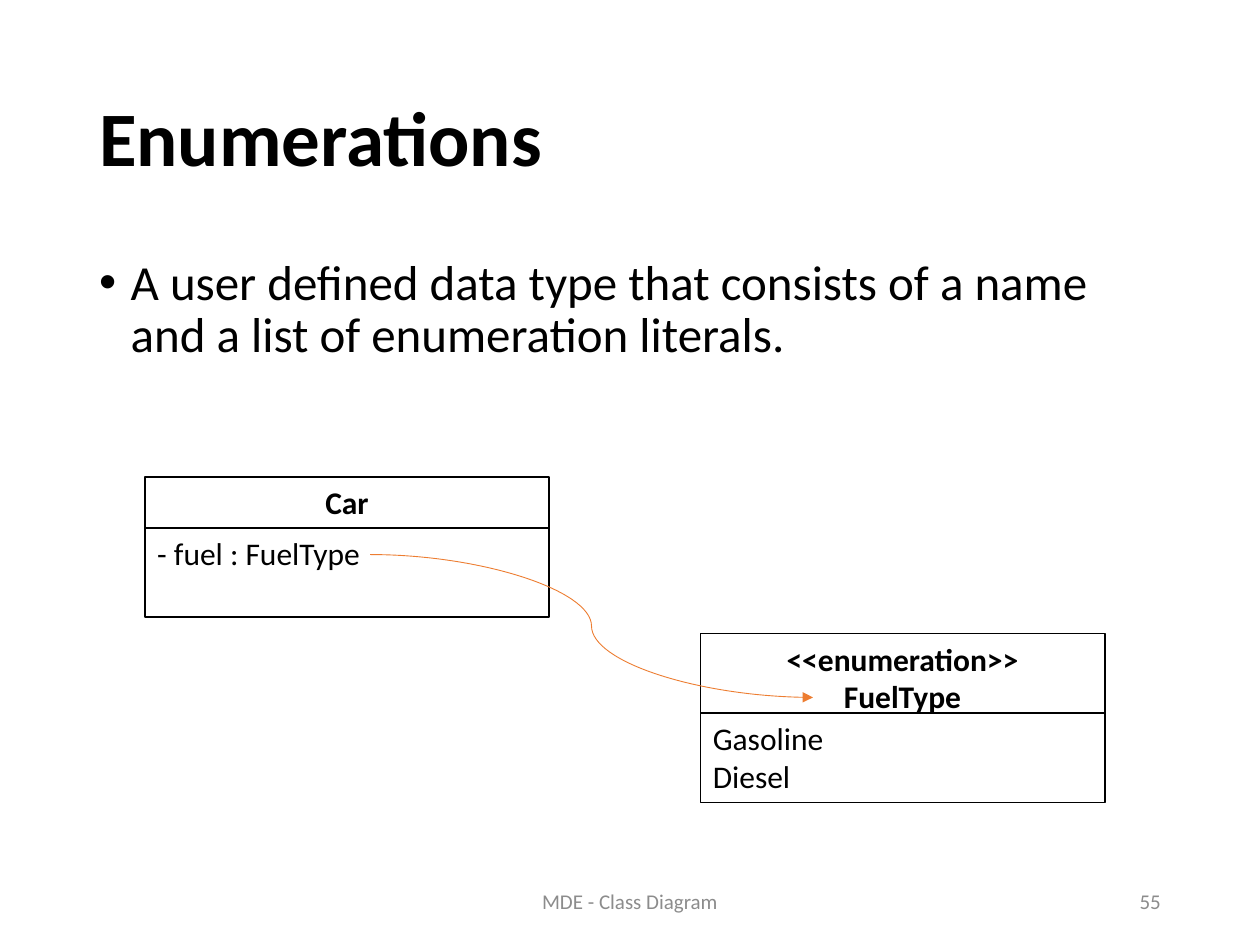
from lxml import etree
from pptx import Presentation
from pptx.dml.color import RGBColor
from pptx.enum.shapes import MSO_CONNECTOR, MSO_SHAPE
from pptx.enum.text import MSO_ANCHOR, PP_ALIGN
from pptx.oxml.ns import qn
from pptx.util import Cm, Pt

BLACK = RGBColor(0x00, 0x00, 0x00)
WHITE = RGBColor(0xFF, 0xFF, 0xFF)
GRAY = RGBColor(0x8C, 0x8C, 0x8C)
ORANGE = RGBColor(0xED, 0x7D, 0x31)
FONT = "Calibri"
LEFT, CENTER, RIGHT = PP_ALIGN.LEFT, PP_ALIGN.CENTER, PP_ALIGN.RIGHT
TOP, MIDDLE = MSO_ANCHOR.TOP, MSO_ANCHOR.MIDDLE
RECTANGLE, CURVE = MSO_SHAPE.RECTANGLE, MSO_CONNECTOR.CURVE

MARGIN = 1.75
CONTENT_WIDTH = 21.9
FOOTER_TOP, FOOTER_HEIGHT = 17.65, 1.02
CLASS_WIDTH = 8.15
BODY_HEIGHT = 1.8


def format_text(text_frame, text, size, color=BLACK, bold=False, align=LEFT, anchor=TOP):
    text_frame.word_wrap = True
    text_frame.vertical_anchor = anchor
    text_frame.text = text
    for paragraph in text_frame.paragraphs:
        paragraph.alignment = align
        for run in paragraph.runs:
            run.font.name = FONT
            run.font.size = Pt(size)
            run.font.bold = bold
            run.font.color.rgb = color


def add_text(slide, left, top, width, height, text, size, **style):
    box = slide.shapes.add_textbox(Cm(left), Cm(top), Cm(width), Cm(height))
    format_text(box.text_frame, text, size, **style)
    return box.text_frame.paragraphs[0]


def add_bullet(paragraph):
    properties = paragraph._p.get_or_add_pPr()
    indent = Cm(0.635)
    properties.set("marL", str(indent))
    properties.set("indent", str(-indent))
    etree.SubElement(properties, qn("a:buFont")).set("typeface", "Arial")
    etree.SubElement(properties, qn("a:buChar")).set("char", "•")


def add_compartment(slide, left, top, height, text, **style):
    shape = slide.shapes.add_shape(
        RECTANGLE, Cm(left), Cm(top), Cm(CLASS_WIDTH), Cm(height))
    shape.shadow.inherit = False
    shape.fill.solid()
    shape.fill.fore_color.rgb = WHITE
    shape.line.color.rgb = BLACK
    shape.line.width = Pt(1)
    format_text(shape.text_frame, text, 18, **style)


def add_class(slide, left, top, name, name_height, body_top, body):
    add_compartment(slide, left, top, name_height, name, bold=True, align=CENTER)
    add_compartment(slide, left, body_top, BODY_HEIGHT, body)


def add_curved_arrow(slide, start_x, start_y, end_x, end_y):
    connector = slide.shapes.add_connector(
        CURVE, Cm(start_x), Cm(start_y), Cm(end_x), Cm(end_y))
    connector.line.color.rgb = ORANGE
    connector.line.width = Pt(0.5)
    line = connector.line._get_or_add_ln()
    etree.SubElement(line, qn("a:tailEnd")).set("type", "triangle")
    etree.SubElement(connector._element.spPr, qn("a:effectLst"))


def main():
    presentation = Presentation()
    presentation.slide_width = Cm(25.4)
    presentation.slide_height = Cm(19.05)
    slide = presentation.slides.add_slide(presentation.slide_layouts[6])

    title = add_text(slide, MARGIN, 1.01, CONTENT_WIDTH, 3.68, "Enumerations", 44,
                     bold=True, anchor=MIDDLE)
    title.line_spacing = 0.9
    definition = add_text(
        slide, MARGIN, 5.07, CONTENT_WIDTH, 12.09,
        "A user defined data type that consists of a name and a list of enumeration literals.",
        28)
    add_bullet(definition)
    definition.line_spacing = 0.9

    add_text(slide, 8.41, FOOTER_TOP, 8.58, FOOTER_HEIGHT, "MDE - Class Diagram", 12,
             color=GRAY, align=CENTER, anchor=MIDDLE)
    add_text(slide, 17.94, FOOTER_TOP, 5.71, FOOTER_HEIGHT, "55", 12,
             color=GRAY, align=RIGHT, anchor=MIDDLE)

    add_class(slide, 14.12, 12.77, "<<enumeration>>\nFuelType", 1.8, 14.38,
              "Gasoline\nDiesel")
    add_class(slide, 2.92, 9.62, "Car", 1.02, 10.64, "- fuel : FuelType")
    add_curved_arrow(slide, 7.46, 11.18, 16.39, 14.06)

    presentation.save("out.pptx")


if __name__ == "__main__":
    main()
